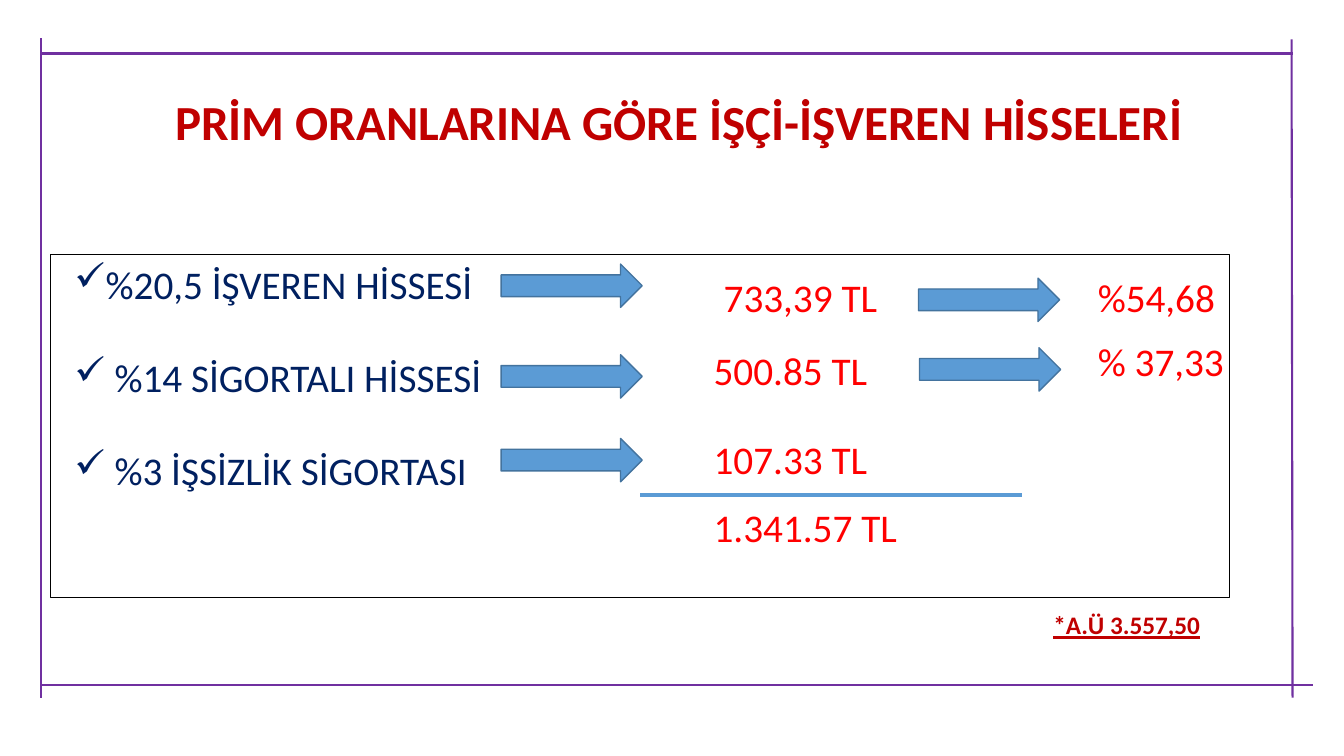
import pptx
import pptx.util
import pptx.dml.color
import pptx.enum.shapes
import pptx.enum.text
import lxml.etree

Inches, Pt = pptx.util.Inches, pptx.util.Pt
Shape = pptx.enum.shapes.MSO_SHAPE
Align = pptx.enum.text.PP_ALIGN

SHARES = ["%20,5 İŞVEREN HİSSESİ", " %14 SİGORTALI HİSSESİ", " %3 İŞSİZLİK SİGORTASI"]
AMOUNTS = [("733,39 TL", 7.08, 2.66), ("500.85 TL", 6.98, 3.39),
           ("107.33 TL", 6.98, 4.27), ("1.341.57 TL", 6.98, 4.94),
           ("%54,68", 10.79, 2.66), ("% 37,33", 10.79, 3.3)]
ARROWS = [(4.97, 2.62), (4.97, 3.52), (4.97, 4.35), (9.12, 3.45), (9.11, 2.76)]
PURPLE, BLUE, RED = "7030A0", "5B9BD5", "C00000"
LINES = [(6.35, 4.91, 10.14, 4.91, BLUE, 3),
         (0.42, 0.53, 12.82, 0.53, PURPLE, 2.25),
         (12.82, 6.92, 12.81, 0.39, PURPLE, 1.5),
         (0.41, 6.92, 0.41, 0.38, PURPLE, 1.5),
         (0.41, 6.8, 13.02, 6.8, PURPLE, 1.5)]

deck = pptx.Presentation()
deck.slide_width, deck.slide_height = Inches(13.33), Inches(7.5)
slide = deck.slides.add_slide(deck.slide_layouts[6])
shapes = slide.shapes


def tint(code):
    return pptx.dml.color.RGBColor.from_string(code)


def child(node, tag, **attrs):
    name = pptx.oxml.ns.qn(tag)
    return lxml.etree.SubElement(node, name, attrs)


def style(para, text, size=28, color="FF0000", bold=False, line=False, align=Align.LEFT):
    para.alignment = align
    run = para.add_run()
    run.text = text
    font = run.font
    font.name, font.size, font.bold, font.underline = "Calibri", Pt(size), bold, line
    font.color.rgb = tint(color)


def write(text, x, y, w=2.03, h=0.57, wrap=True, **form):
    box = shapes.add_textbox(Inches(x), Inches(y), Inches(w), Inches(h))
    box.text_frame.word_wrap = wrap
    style(box.text_frame.paragraphs[0], text, **form)


def draw(kind, x, y, w, h, fill, edge, width):
    item = shapes.add_shape(kind, Inches(x), Inches(y), Inches(w), Inches(h))
    item.shadow.inherit = False
    if fill:
        item.fill.solid()
        item.fill.fore_color.rgb = tint(fill)
    else:
        item.fill.background()
    item.line.color.rgb = tint(edge)
    item.line.width = Pt(width)
    return item


def rule(x1, y1, x2, y2, color, width):
    line = shapes.add_connector(pptx.enum.shapes.MSO_CONNECTOR.STRAIGHT,
                                Inches(x1), Inches(y1), Inches(x2), Inches(y2))
    line.line.color.rgb = tint(color)
    line.line.width = Pt(width)
    child(line._element.spPr, "a:effectLst")


panel = draw(Shape.RECTANGLE, 0.5, 2.53, 11.69, 3.4, None, "000000", 0.75)
frame = panel.text_frame
frame.word_wrap = True
frame.vertical_anchor = pptx.enum.text.MSO_ANCHOR.TOP
for i, share in enumerate(SHARES):
    para = frame.add_paragraph() if i else frame.paragraphs[0]
    if i:
        para.space_before = Pt(33)
    props = para._p.get_or_add_pPr()
    props.set("marL", str(Inches(0.45)))
    props.set("indent", str(-Inches(0.31)))
    child(props, "a:buChar", char="✓")
    style(para, share, color="002060", align=Align.JUSTIFY)

for x, y in ARROWS:
    draw(Shape.RIGHT_ARROW, x, y, 1.4, 0.43, BLUE, "43739E", 1)
for text, x, y in AMOUNTS:
    write(text, x, y)
for line in LINES:
    rule(*line)
write("PRİM ORANLARINA GÖRE İŞÇİ-İŞVEREN HİSSELERİ", 0.88, 0.86, 11.72, 0.69,
      size=35, color=RED, bold=True, align=Align.CENTER)
write("*A.Ü 3.557,50", 10.35, 6, 1.67, 0.4, wrap=False,
      size=18, color=RED, bold=True, line=True)

deck.save("out.pptx")
